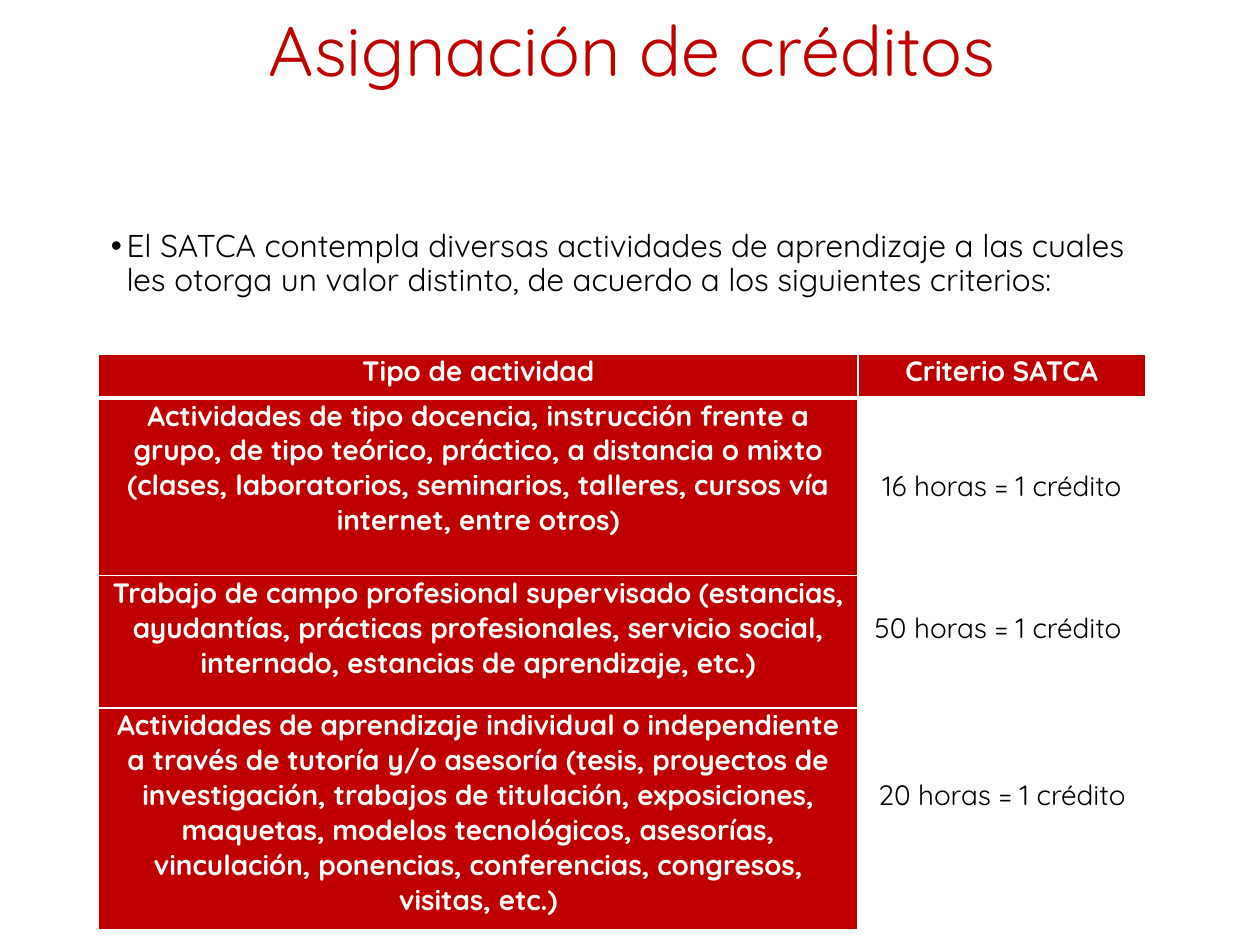
from dataclasses import dataclass

from lxml.etree import SubElement
from pptx import Presentation
from pptx.dml.color import RGBColor
from pptx.enum.text import MSO_ANCHOR, PP_ALIGN
from pptx.oxml.ns import qn
from pptx.util import Pt

# Content
TITLE = "Asignación de créditos "
INTRO = ("El SATCA contempla diversas actividades de aprendizaje a las cuales les "
         "otorga un valor distinto, de acuerdo a los siguientes criterios:")
HEADINGS = ("Tipo de actividad", "Criterio SATCA")
# Activity, criterion, row height, lines the criterion is lowered by
ACTIVITIES = [
    ("Actividades de tipo docencia, instrucción frente a grupo, de tipo teórico, "
     "práctico, a distancia o mixto (clases, laboratorios, seminarios, talleres, "
     "cursos vía internet, entre otros)", "16 horas = 1 crédito", 101.5, 2),
    ("Trabajo de campo profesional supervisado (estancias, ayudantías, prácticas "
     "profesionales, servicio social, internado, estancias de aprendizaje, etc.)",
     "50 horas = 1 crédito ", 75.6, 1),
    ("Actividades de aprendizaje individual o independiente a través de tutoría y/o "
     "asesoría (tesis, proyectos de investigación, trabajos de titulación, "
     "exposiciones, maquetas, modelos tecnológicos, asesorías, vinculación, "
     "ponencias, conferencias, congresos, visitas, etc.)",
     "20 horas = 1 crédito", 126.7, 2),
]


@dataclass(frozen=True)
class Theme:
    font: str = "Quicksand"
    red: str = "C00000"
    white: str = "FFFFFF"
    black: str = "000000"
    title: int = 40
    intro: int = 18
    table: int = 16


THEME = Theme()
LEFT, TEXT_WIDTH = 56.2, 620.6
TABLE_TOP, HEADING_HEIGHT = 202.3, 25.2
COLUMN_WIDTHS = (434.2, 164.2)
CELL_MARGIN, TABLE_LINE = 5, 20


def style(para, size, color, bold=False):
    para.font.name = THEME.font
    para.font.size = Pt(size)
    para.font.bold = bold
    para.font.color.rgb = RGBColor.from_string(color)


def add_text(page, text, top, height, size, color, anchor):
    box = page.shapes.add_textbox(Pt(LEFT), Pt(top), Pt(TEXT_WIDTH), Pt(height))
    box.text_frame.word_wrap = True
    box.text_frame.vertical_anchor = anchor
    para = box.text_frame.paragraphs[0]
    para.text = text
    para.line_spacing = 0.9
    return para


def add_bullet(para, indent):
    properties = para._p.get_or_add_pPr()
    properties.set("marL", str(Pt(indent)))
    properties.set("indent", str(-Pt(indent)))
    SubElement(properties, qn("a:buFont"), typeface="Arial")
    SubElement(properties, qn("a:buChar"), char="•")


def set_borders(cell, bottom):
    properties = cell._tc.get_or_add_tcPr()
    widths = {"a:lnL": 1, "a:lnR": 1, "a:lnT": 1, "a:lnB": bottom}
    for position, (side, width) in enumerate(widths.items()):
        line = SubElement(properties, qn(side), w=str(Pt(width)))
        properties.insert(position, line)
        fill = SubElement(line, qn("a:solidFill"))
        SubElement(fill, qn("a:srgbClr"), val=THEME.white)


def fill_cell(cell, text, fill, color, bold, lowered=0, bottom=1):
    cell.margin_left = cell.margin_right = Pt(CELL_MARGIN)
    cell.margin_top, cell.margin_bottom = Pt(lowered * TABLE_LINE), Pt(0)
    cell.fill.solid()
    cell.fill.fore_color.rgb = RGBColor.from_string(fill)
    set_borders(cell, bottom)
    para = cell.text_frame.paragraphs[0]
    para.text = text
    para.alignment = PP_ALIGN.CENTER
    style(para, THEME.table, color, bold)


def add_credit_table(page):
    heights = [HEADING_HEIGHT] + [activity[2] for activity in ACTIVITIES]
    table = page.shapes.add_table(
        len(heights), len(COLUMN_WIDTHS), Pt(LEFT), Pt(TABLE_TOP),
        Pt(sum(COLUMN_WIDTHS)), Pt(sum(heights))).table
    for column, width in zip(table.columns, COLUMN_WIDTHS):
        column.width = Pt(width)
    for row, height in zip(table.rows, heights):
        row.height = Pt(height)
    for column, heading in enumerate(HEADINGS):
        fill_cell(table.cell(0, column), heading, THEME.red, THEME.white, True, bottom=3)
    for row, (activity, criterion, _, lowered) in enumerate(ACTIVITIES, start=1):
        fill_cell(table.cell(row, 0), activity, THEME.red, THEME.white, True)
        fill_cell(table.cell(row, 1), criterion, THEME.white, THEME.black, False, lowered)


def main():
    deck = Presentation()
    deck.slide_width, deck.slide_height = Pt(720), Pt(540)
    page = deck.slides.add_slide(deck.slide_layouts[6])

    # Title
    title = add_text(page, TITLE, -21.6, 104.4, THEME.title, THEME.red, MSO_ANCHOR.MIDDLE)
    title.alignment = PP_ALIGN.CENTER
    style(title, THEME.title, THEME.red)

    # Introduction
    intro = add_text(page, INTRO, 128.2, 342.7, THEME.intro, THEME.black, MSO_ANCHOR.TOP)
    add_bullet(intro, 9)
    style(intro, THEME.intro, THEME.black)

    # Credits by activity
    add_credit_table(page)
    deck.save("out.pptx")


if __name__ == "__main__":
    main()
